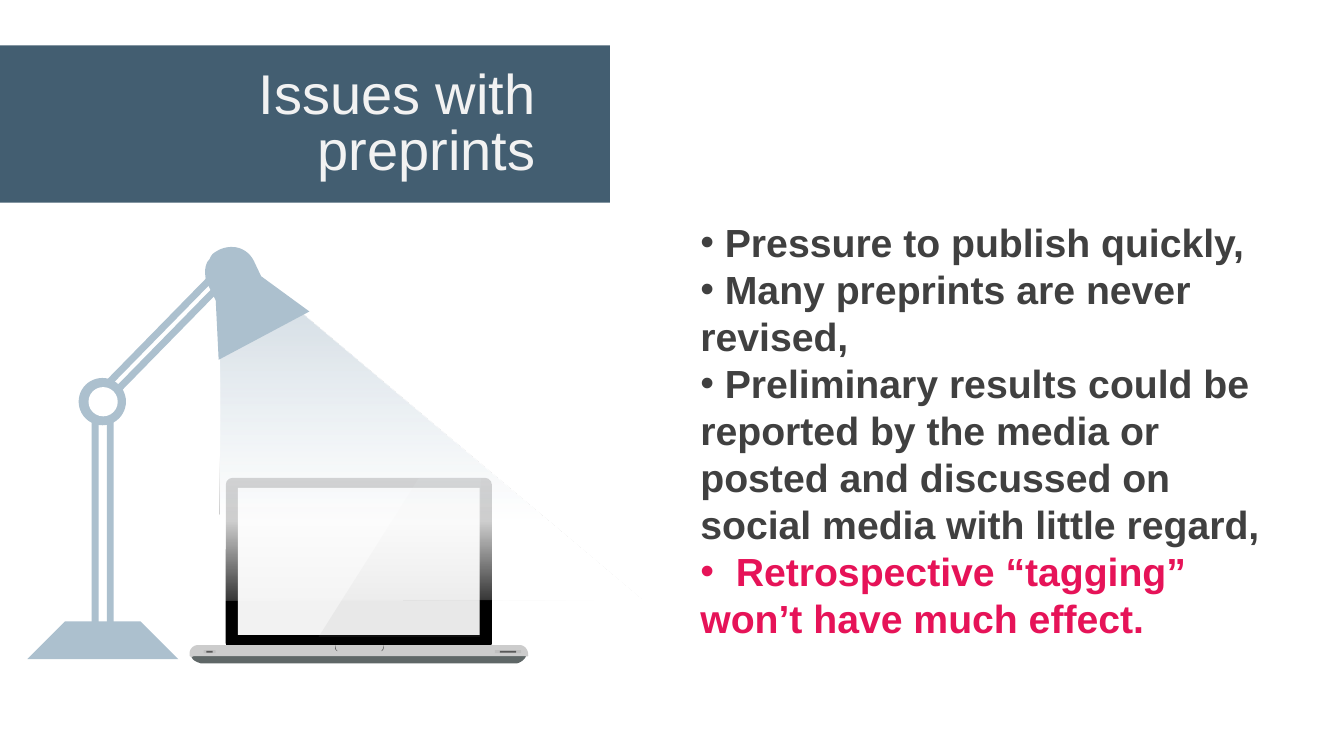
from dataclasses import dataclass

from lxml.etree import SubElement
from pptx import Presentation
from pptx.dml.color import RGBColor
from pptx.enum.shapes import MSO_SHAPE as Preset
from pptx.enum.text import MSO_ANCHOR as Anchor, MSO_AUTO_SIZE as AutoSize, PP_ALIGN as Align
from pptx.oxml.ns import qn
from pptx.util import Pt


@dataclass(frozen=True)
class Theme:
    font: str = "Arial"
    title_size: float = 40
    body_size: float = 28
    body_leading: float = 33.6
    banner: str = "435E71"
    title: str = "F2F2F2"
    body: str = "404040"
    accent: str = "E61358"
    lamp: str = "ACC0CE"
    light: str = "D6DFE6"
    white: str = "FFFFFF"
    lid: str = "000000"
    screen: str = "F2F2F2"
    gloss: str = "999999"
    deck: str = "CCCCCC"
    underside: str = "5F6767"
    notch: str = "4D4D4D"
    port: str = "BFBFBF"
    slot: str = "595959"


@dataclass(frozen=True)
class Box:
    left: float
    top: float
    width: float
    height: float

    def inner(self, left, top, width, height):
        return Box(self.left + left, self.top + top, width, height)

    def lengths(self):
        return Pt(self.left), Pt(self.top), Pt(self.width), Pt(self.height)


THEME = Theme()
CURVE_STEPS = 8


def paint(shape, color):
    shape.shadow.inherit = False
    shape.fill.solid()
    shape.fill.fore_color.rgb = RGBColor.from_string(color)
    shape.line.fill.background()
    return shape


def add_preset(page, preset, box, color, rotation=0):
    shape = paint(page.shapes.add_shape(preset, *box.lengths()), color)
    shape.rotation = rotation
    return shape


def add_outline(page, box, start, steps, color):
    points = [start]
    for step in steps:
        if len(step) == 2:
            points.append(step)
            continue
        x0, y0 = points[-1]
        x1, y1, x2, y2, x3, y3 = step
        for index in range(1, CURVE_STEPS + 1):
            t = index / CURVE_STEPS
            a, b, c, d = (1 - t) ** 3, 3 * t * (1 - t) ** 2, 3 * t * t * (1 - t), t ** 3
            points.append((a * x0 + b * x1 + c * x2 + d * x3,
                           a * y0 + b * y1 + c * y2 + d * y3))
    corners = [(Pt(box.left + x), Pt(box.top + y)) for x, y in points]
    builder = page.shapes.build_freeform(*corners[0], scale=1.0)
    builder.add_line_segments(corners[1:], close=True)
    return paint(builder.convert_to_shape(), color)


def add_alpha(color_element, percent):
    SubElement(color_element, qn("a:alpha")).set("val", str(percent * 1000))


def fade_upwards(shape, stops):
    solid = shape.element.spPr.find(qn("a:solidFill"))
    gradient = solid.makeelement(qn("a:gradFill"), {"rotWithShape": "1"})
    stop_list = SubElement(gradient, qn("a:gsLst"))
    for position, color, opacity in stops:
        stop = SubElement(stop_list, qn("a:gs"), {"pos": str(position * 1000)})
        add_alpha(SubElement(stop, qn("a:srgbClr"), {"val": color}), opacity)
    SubElement(gradient, qn("a:lin"), {"ang": "16200000", "scaled": "0"})
    solid.getparent().replace(solid, gradient)


def add_laptop(page, box):
    add_outline(page, box, (234.4, 132.8), [
        (234.4, 132.8, 238.7, 132, 240.8, 127.7),
        (240.8, 127, 240.1, 125.6, 238.7, 125.6),
        (4, 126.3), (2.5, 126.3, 1.8, 127, 1.8, 128.4),
        (3.2, 131.3, 6.1, 132, 8.3, 132.8),
    ], THEME.underside)
    lid = add_preset(page, Preset.ROUNDED_RECTANGLE, box.inner(26.3, 0.3, 190.1, 123.1), THEME.lid)
    lid.adjustments[0] = 0.04
    add_preset(page, Preset.RECTANGLE, box.inner(34.9, 7.5, 172.8, 105.1), THEME.screen)
    add_outline(page, box, (6.1, 119.8), [
        (236.5, 119.8), (239.4, 119.8, 242.3, 122.7, 242.3, 126.3),
        (242.3, 127), (242.3, 127, 243, 128.4, 240.1, 127.7),
        (3.2, 127.7), (2.5, 128.4, 0.4, 128.4, 0.4, 127),
        (0.4, 125.6), (0.4, 122.7, 3.2, 119.8, 6.1, 119.8),
    ], THEME.deck)
    center = 121.7
    for side in (-1, 1):
        outer, low, bend, inward = (center + side * reach for reach in (16.9, 17.7, 18.4, 15.5))
        add_outline(page, box, (outer, 119.8), [
            (outer, 119.8, low, 122.7, inward, 124.1),
            (bend, 123.4, outer, 119.8, outer, 119.8),
        ], THEME.notch)
    for left, width, inset in ((10.4, 8.6, 2), (218.5, 18.7, 3.6)):
        port = box.inner(left, 123.4, width, 2.2)
        add_preset(page, Preset.ROUNDED_RECTANGLE, port, THEME.port)
        slot = port.inner(inset, 0.5, width - 2 * inset, 1.3)
        add_preset(page, Preset.ROUNDED_RECTANGLE, slot, THEME.slot)
    gloss = add_outline(page, box, (164.5, 0),
                        [(208.4, 0), (207.7, 114), (92.5, 114)], THEME.gloss)
    add_alpha(gloss.element.spPr.find(qn("a:solidFill"))[0], 10)


def add_lamp(page, box):
    beam = add_outline(page, box, (138.7, 76), [
        (139.4, 135, 138, 194.1, 138, 253.1), (438.9, 251.7), (191.2, 42.9),
    ], THEME.light)
    fade_upwards(beam, [(0, THEME.white, 20), (27, THEME.white, 80), (100, THEME.light, 100)])
    for offset in (0, 5.7):
        arm = box.inner(95.5 + offset, offset - 7.5, 5, 129.6)
        add_preset(page, Preset.RECTANGLE, arm, THEME.lamp, 44.4)
    for left in (46.5, 57.3):
        add_preset(page, Preset.RECTANGLE, box.inner(left, 121.4, 5, 147.6), THEME.lamp)
    add_preset(page, Preset.OVAL, box.inner(37.2, 94, 33.8, 33.8), THEME.lamp)
    add_preset(page, Preset.OVAL, box.inner(44.2, 100.5, 20.9, 20.9), THEME.white)
    add_outline(page, box, (137.2, 2.6), [
        (140.1, 1.1, 143.7, 0.4, 146.6, 0.4),
        (153.8, 0.4, 159.6, 4.7, 162.4, 10.5),
        (167.5, 21.3), (202, 46.5), (137.2, 81), (135.1, 38.6), (128.6, 25.6),
        (128.6, 26.3, 125, 14.1, 130.8, 9),
        (132.2, 4.7, 135.1, 4, 137.2, 2.6),
    ], THEME.lamp)
    add_preset(page, Preset.DIAGONAL_STRIPE, box.inner(16.3, 256.7, 76.3, 76.3), THEME.lamp, 45)


def add_text(page, box, lines, size, leading):
    frame = page.shapes.add_textbox(*box.lengths()).text_frame
    frame.word_wrap = True
    frame.auto_size = AutoSize.SHAPE_TO_FIT_TEXT
    frame.text = "\n".join(text for text, color in lines)
    for para, (text, color) in zip(frame.paragraphs, lines):
        para.line_spacing = Pt(leading)
        font = para.runs[0].font
        font.name, font.size = THEME.font, Pt(size)
        font.color.rgb = RGBColor.from_string(color)
    return frame


def add_banner(page, box):
    add_preset(page, Preset.RECTANGLE, box, THEME.banner)
    frame = add_text(page, box.inner(82, 17.3, 300.3, 80.6),
                     [("Issues with preprints", THEME.title)], THEME.title_size, 40)
    frame.margin_left = frame.margin_top = frame.margin_right = frame.margin_bottom = 0
    frame.vertical_anchor = Anchor.MIDDLE
    frame.paragraphs[0].alignment = Align.RIGHT


def add_issues(page, box):
    frame = add_text(page, box, [
        (" Pressure to publish quickly,", THEME.body),
        (" Many preprints are never revised,", THEME.body),
        (" Preliminary results could be reported by the media or posted and discussed "
         "on social media with little regard,", THEME.body),
        ("  Retrospective “tagging” won’t have much effect.", THEME.accent),
    ], THEME.body_size, THEME.body_leading)
    for para in frame.paragraphs:
        para.runs[0].font.bold = True
        properties = para._p.get_or_add_pPr()
        SubElement(properties, qn("a:buFont"), {"typeface": THEME.font})
        SubElement(properties, qn("a:buChar"), {"char": "•"})


def main():
    deck = Presentation()
    deck.slide_width, deck.slide_height = Pt(960), Pt(540)
    page = deck.slides.add_slide(deck.slide_layouts[6])
    add_laptop(page, Box(135, 341, 242, 133))
    add_lamp(page, Box(19, 176, 440, 295))
    add_banner(page, Box(0, 32.4, 435.6, 112.3))
    add_issues(page, Box(493.2, 152.6, 435.6, 312.5))
    deck.save("out.pptx")


if __name__ == "__main__":
    main()
